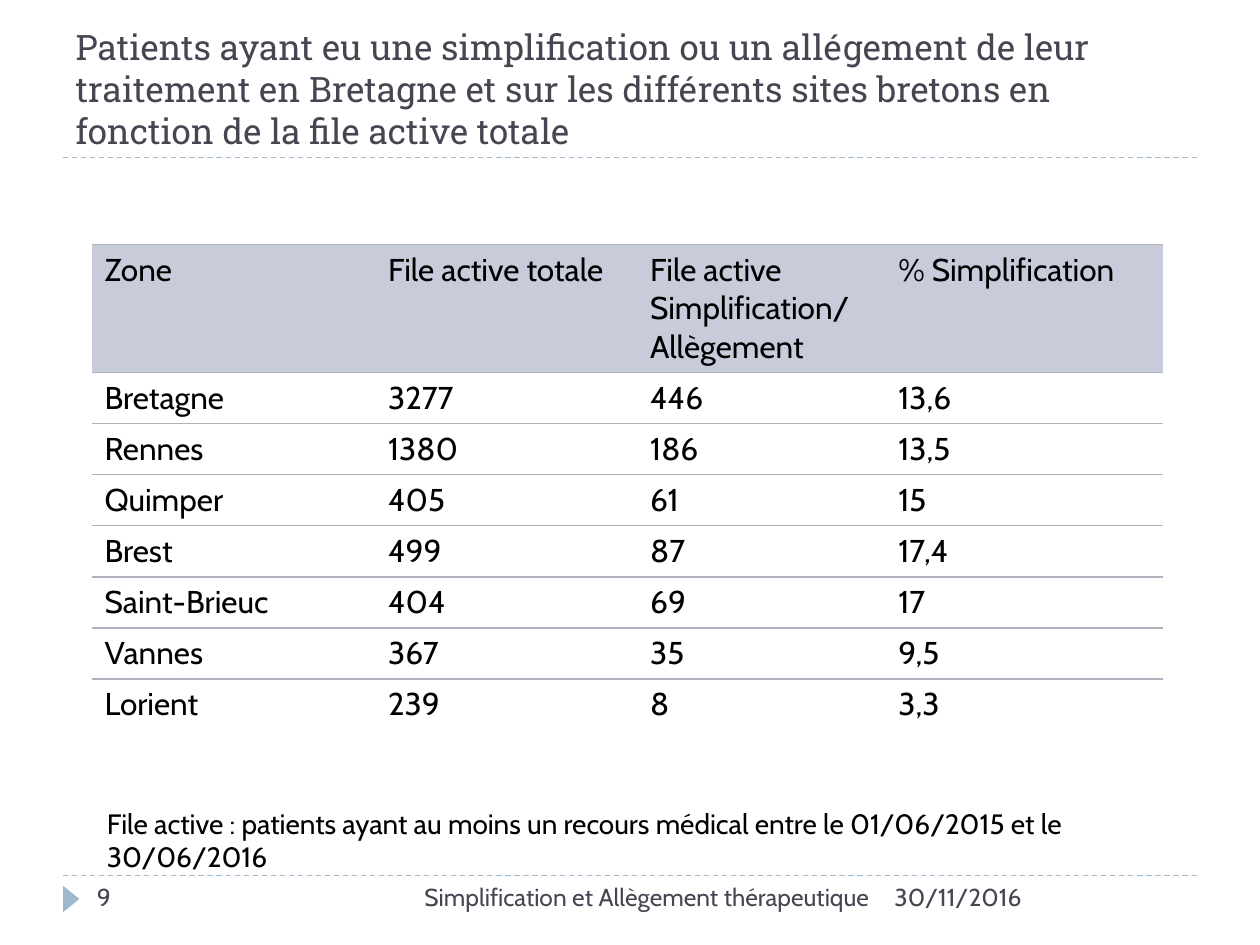
from lxml.etree import SubElement
from pptx import Presentation
from pptx.dml.color import RGBColor
from pptx.enum.dml import MSO_LINE
from pptx.enum.shapes import MSO_CONNECTOR, MSO_SHAPE
from pptx.enum.text import MSO_ANCHOR, PP_ALIGN
from pptx.oxml import parse_xml
from pptx.oxml.ns import nsdecls, qn
from pptx.util import Inches, Pt

BLACK = RGBColor(0x00, 0x00, 0x00)
SLATE = RGBColor(0x46, 0x46, 0x53)
BLUE = RGBColor(0x9F, 0xB8, 0xCD)
HEAD = RGBColor(0xC7, 0xCB, 0xDA)
RULE = RGBColor(0xB2, 0xB2, 0xBE)

COLS = [2.25, 2.08, 1.97, 2.2]
ROW = 0.405
ROWS = [
    ("Zone", "File active totale", "File active Simplification/\vAllègement",
     "% Simplification"),
    ("Bretagne", "3277", "446", "13,6"),
    ("Rennes", "1380", "186", "13,5"),
    ("Quimper", "405", "61", "15"),
    ("Brest", "499", "87", "17,4"),
    ("Saint-Brieuc", "404", "69", "17"),
    ("Vannes", "367", "35", "9,5"),
    ("Lorient", "239", "8", "3,3"),
]


def write(frame, text, size=14, font="Cabin", color=SLATE, align=PP_ALIGN.LEFT):
    frame.text = text
    frame.word_wrap = True
    para = frame.paragraphs[0]
    para.alignment = align
    for run in para.runs:
        run.font.size = Pt(size)
        run.font.name = font
        run.font.bold = False
        run.font.color.rgb = color


def add_text(slide, box, text, **style):
    shape = slide.shapes.add_textbox(*map(Inches, box))
    write(shape.text_frame, text, **style)


def add_title(slide, text):
    title = slide.shapes.title
    title.left, title.top = Inches(0.5), Inches(0.17)
    title.width, title.height = Inches(9), Inches(1.08)
    write(title.text_frame, text, size=20, font="Roboto Slab")
    title.text_frame.vertical_anchor = MSO_ANCHOR.BOTTOM


def add_rule(slide, y):
    rule = slide.shapes.add_connector(
        MSO_CONNECTOR.STRAIGHT, Inches(0.5), Inches(y), Inches(9.5), Inches(y))
    rule.line.color.rgb = BLUE
    rule.line.width = Pt(0.75)
    rule.line.dash_style = MSO_LINE.DASH
    SubElement(rule._element.spPr, qn("a:effectLst"))


def add_marker(slide):
    mark = slide.shapes.add_shape(
        MSO_SHAPE.ISOSCELES_TRIANGLE,
        Inches(0.46), Inches(7.07), Inches(0.21), Inches(0.13))
    mark.rotation = 90
    mark.shadow.inherit = False
    mark.fill.solid()
    mark.fill.fore_color.rgb = BLUE
    mark.line.fill.background()


def set_edges(cell, shown):
    """Draw the edges named in shown (of L, R, T, B) and hide the others."""
    line = f'<a:solidFill><a:srgbClr val="{RULE}"/></a:solidFill>'
    props = cell._tc.get_or_add_tcPr()
    for spot, side in enumerate("LRTB"):
        fill = line if side in shown else "<a:noFill/>"
        props.insert(spot, parse_xml(
            f'<a:ln{side} {nsdecls("a")} w="12700">{fill}</a:ln{side}>'))


def add_grid(slide):
    table = slide.shapes.add_table(
        len(ROWS), len(COLS), Inches(0.73), Inches(1.94),
        Inches(sum(COLS)), Inches(ROW * len(ROWS))).table
    table.horz_banding = False
    for col, width in zip(table.columns, COLS):
        col.width = Inches(width)
    for r, row in enumerate(ROWS):
        table.rows[r].height = Inches(ROW)
        for c, text in enumerate(row):
            cell = table.cell(r, c)
            write(cell.text_frame, text, size=18, color=BLACK)
            if r == 0:
                cell.fill.solid()
                cell.fill.fore_color.rgb = HEAD
            else:
                cell.fill.background()
            set_edges(cell, "T" if r == len(ROWS) - 1 else "TB")


def main():
    deck = Presentation()
    deck.slide_width, deck.slide_height = Inches(10), Inches(7.5)
    slide = deck.slides.add_slide(deck.slide_layouts[5])
    for y in (6.95, 1.25):
        add_rule(slide, y)
    add_marker(slide)
    add_title(slide, "Patients ayant eu une simplification ou un allégement de "
                     "leur traitement en Bretagne et sur les différents sites "
                     "bretons en fonction de la file active totale")
    add_grid(slide)
    add_text(slide, (7, 6.95, 2.5, 0.4), "30/11/2016")
    add_text(slide, (3.17, 6.95, 3.83, 0.4),
             "Simplification et Allègement thérapeutique", align=PP_ALIGN.RIGHT)
    add_text(slide, (0.75, 6.35, 8.82, 0.37),
             "File active : patients ayant au moins un recours médical entre "
             "le 01/06/2015 et le 30/06/2016", size=16, color=BLACK)
    add_text(slide, (0.67, 6.95, 2.17, 0.4), "9")
    deck.save("out.pptx")


if __name__ == "__main__":
    main()
